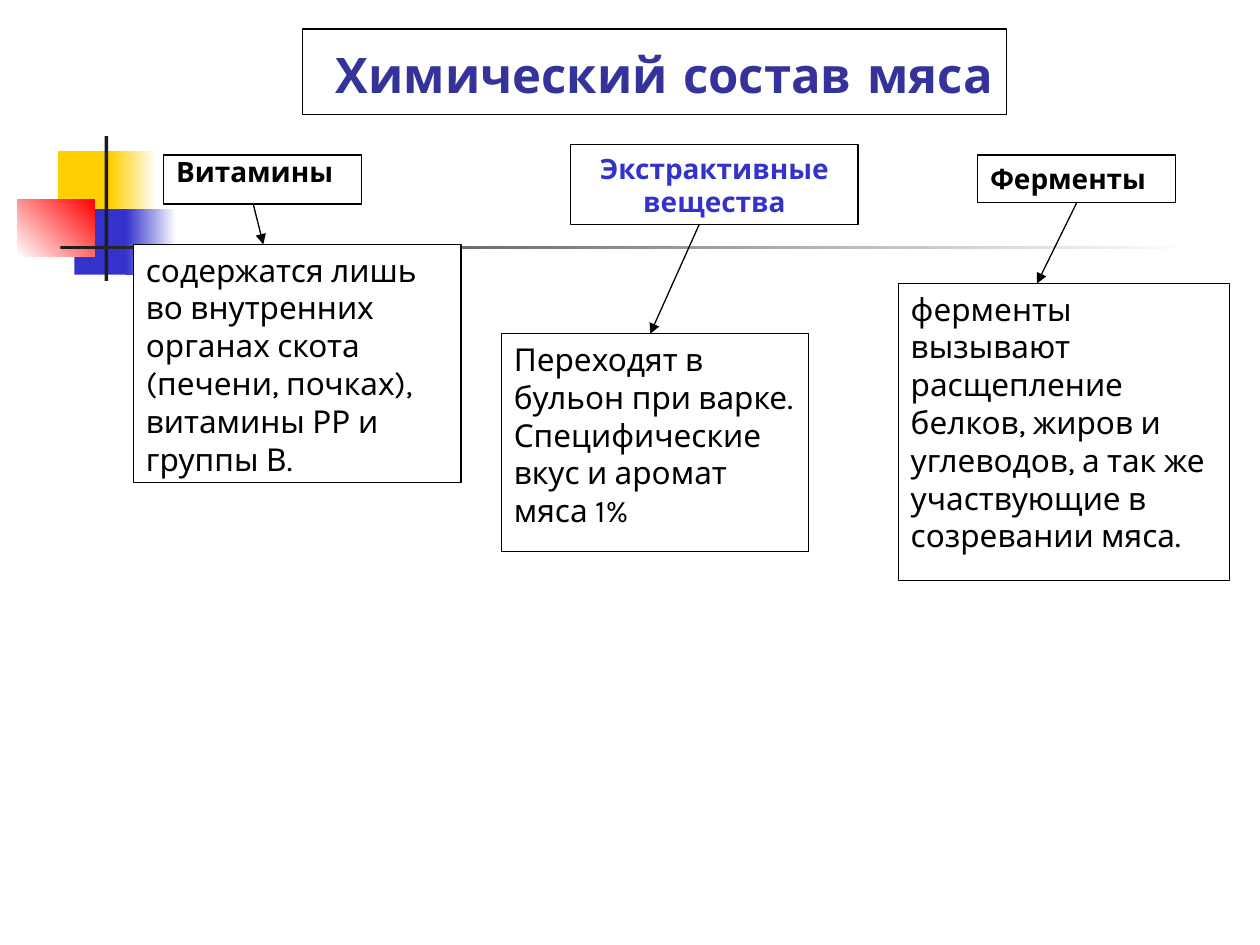
"""Build a slide on the chemical composition of meat."""
from lxml import etree
from pptx import Presentation
from pptx.dml.color import RGBColor
from pptx.enum.shapes import MSO_CONNECTOR, MSO_SHAPE
from pptx.enum.text import MSO_ANCHOR, PP_ALIGN
from pptx.oxml.ns import qn
from pptx.util import Inches, Pt

RECTANGLE = MSO_SHAPE.RECTANGLE
STRAIGHT = MSO_CONNECTOR.STRAIGHT
TOP, BOTTOM = MSO_ANCHOR.TOP, MSO_ANCHOR.BOTTOM
LEFT, CENTER = PP_ALIGN.LEFT, PP_ALIGN.CENTER
BOTTOM_SITE = 2
FONT = "Karla"

COLORS = {
    "white": "FFFFFF", "black": "000000", "dark": "1C1C1C", "yellow": "FFCF01",
    "blue": "3333CC", "red": "FF0000", "title": "333399",
}

DECORATIONS = [
    ((0.46, 1.2, 0.48, 0.52), ("yellow",), 0),
    ((0.88, 1.2, 0.36, 0.52), ("yellow", "white"), 0),
    ((0.59, 1.66, 0.46, 0.52), ("blue",), 0),
    ((1, 1.66, 0.4, 0.52), ("blue", "white"), 0),
    ((0.14, 1.58, 0.61, 0.46), ("white", "red"), 45),
    ((0.83, 1.08, 0.03, 1.15), ("dark",), 0),
    ((0.48, 1.95, 9, 0.03), ("dark", "white"), 0),
]

TITLE_AREA = (2.4, 0.23, 5.59, 0.68)
TITLE_SPANS = [(" ", 44), ("Химический", 28), (" ", 36), ("состав", 28), (" ", 36), ("мяса", 28)]

TOPICS = [
    {
        "heading": "Витамины", "heading_area": (1.3, 1.23, 1.57, 0.39),
        "color": "black", "align": LEFT, "spacing": 0.8,
        "text": "содержатся лишь во внутренних органах скота (печени, почках), "
                "витамины РР и группы В.",
        "text_area": (1.06, 1.94, 2.6, 1.89),
        "arrow": (2.01, 1.62, 2.09, 1.94), "joined": False,
    },
    {
        "heading": "Экстрактивные вещества", "heading_area": (4.53, 1.15, 2.28, 0.63),
        "color": "blue", "align": CENTER, "spacing": 1.0,
        "text": "Переходят в бульон при варке. Специфические вкус и аромат мяса 1%",
        "text_area": (3.98, 2.65, 2.44, 1.73),
        "arrow": (5.55, 1.78, 5.16, 2.65), "joined": False,
    },
    {
        "heading": "Ферменты", "heading_area": (7.76, 1.23, 1.57, 0.38),
        "color": "black", "align": LEFT, "spacing": 1.0,
        "text": "ферменты вызывают расщепление белков, жиров и углеводов, "
                "а так же участвующие в созревании мяса.",
        "text_area": (7.13, 2.25, 2.63, 2.36),
        "arrow": (8.54, 1.62, 8.23, 2.25), "joined": True,
    },
]


def rgb(name):
    return RGBColor.from_string(COLORS[name])


def add_rectangle(page, area, colors, angle=0):
    box = page.shapes.add_shape(RECTANGLE, *map(Inches, area))
    box.shadow.inherit = False
    box.line.fill.background()
    if len(colors) == 1:
        box.fill.solid()
        box.fill.fore_color.rgb = rgb(colors[0])
    else:
        box.fill.gradient()
        box.fill.gradient_angle = angle
        for stop, color in zip(box.fill.gradient_stops, colors):
            stop.color.rgb = rgb(color)
    return box


def add_text_box(page, area, spans, color="black", bold=False, align=LEFT,
                 spacing=1.0, anchor=TOP, wrap=True):
    box = add_rectangle(page, area, ("white",))
    box.line.color.rgb = rgb("black")
    box.line.width = Pt(0.75)
    frame = box.text_frame
    frame.word_wrap = wrap
    frame.vertical_anchor = anchor
    para = frame.paragraphs[0]
    para.alignment = align
    para.line_spacing = spacing
    for text, size in spans:
        span = para.add_run()
        span.text = text
        span.font.name = FONT
        span.font.size = Pt(size)
        span.font.bold = bold
        span.font.color.rgb = rgb(color)
    return box


def add_arrow(page, ends):
    arrow = page.shapes.add_connector(STRAIGHT, *map(Inches, ends))
    arrow.line.color.rgb = rgb("black")
    arrow.line.width = Pt(0.75)
    etree.SubElement(arrow.line._get_or_add_ln(), qn("a:tailEnd"), type="triangle")
    etree.SubElement(arrow._element.spPr, qn("a:effectLst"))
    return arrow


def main():
    deck = Presentation()
    deck.slide_width, deck.slide_height = Inches(10), Inches(7.5)
    page = deck.slides.add_slide(deck.slide_layouts[6])
    for area, colors, angle in DECORATIONS:
        add_rectangle(page, area, colors, angle)
    add_text_box(page, TITLE_AREA, TITLE_SPANS, "title", True, CENTER,
                 anchor=BOTTOM, wrap=False)
    for topic in TOPICS:
        heading = add_text_box(page, topic["heading_area"], [(topic["heading"], 16)],
                               topic["color"], True, topic["align"], topic["spacing"])
        add_text_box(page, topic["text_area"], [(topic["text"], 18)])
        arrow = add_arrow(page, topic["arrow"])
        if topic["joined"]:
            arrow.begin_connect(heading, BOTTOM_SITE)
    deck.save("out.pptx")


if __name__ == "__main__":
    main()
